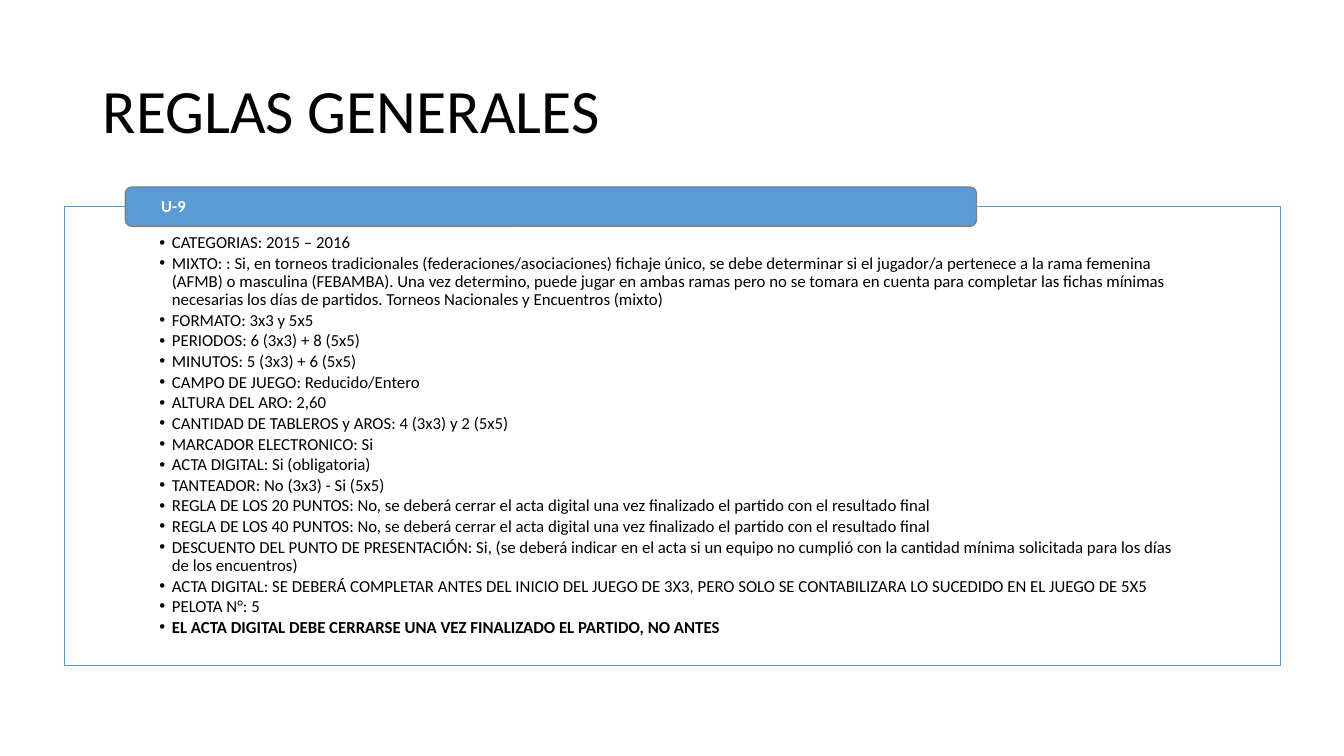
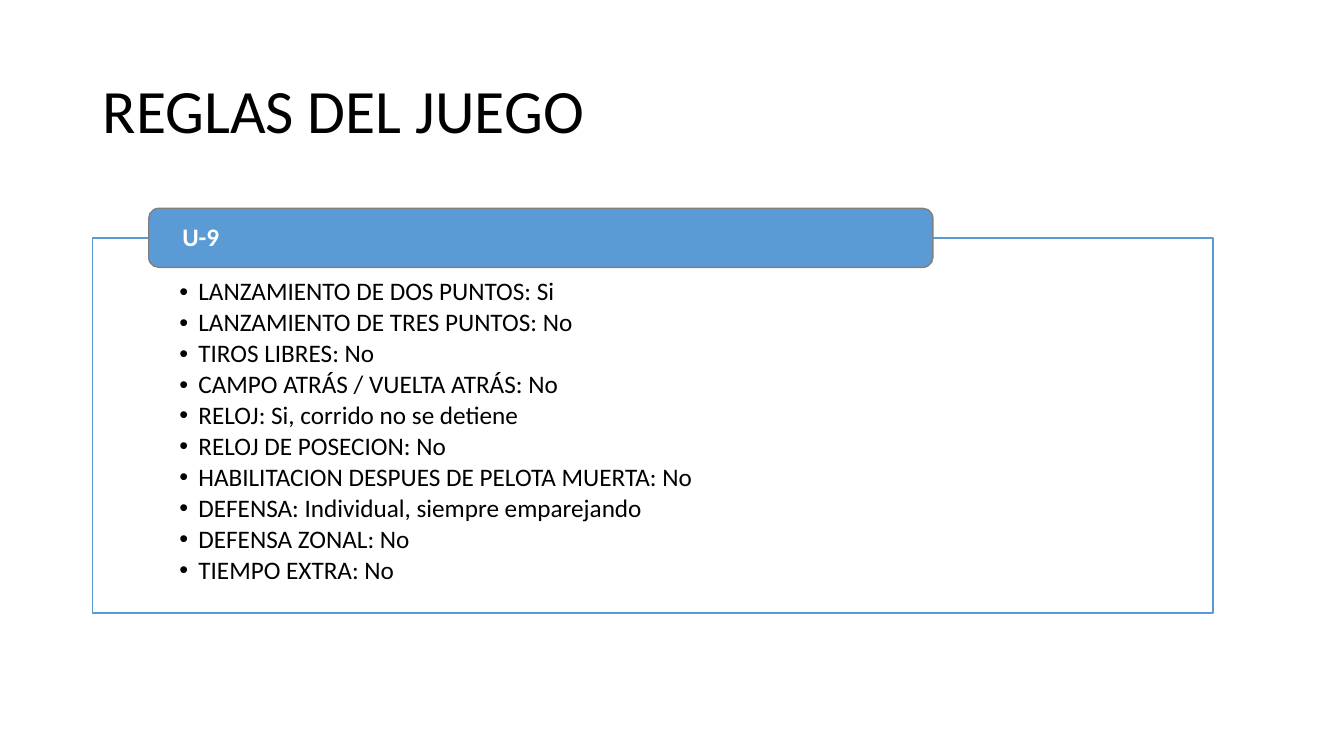
import pptx
import pptx.util
import pptx.dml.color
import pptx.enum.shapes
import pptx.enum.text
import pptx.oxml.ns
import lxml.etree

Inches, Pt = pptx.util.Inches, pptx.util.Pt
ANCHOR = pptx.enum.text.MSO_ANCHOR
SHAPE = pptx.enum.shapes.MSO_SHAPE

FONT = "Calibri"
BLACK, WHITE, BLUE, GRAY = "000000", "FFFFFF", "5B9BD5", "808080"

PAGES = [
    {
        "title": "REGLAS GENERALES",
        "category": "U-9",
        "frame": (0.64, 2.05, 12.06, 4.55),
        "margin": 0.94,
        "size": 12,
        "rules": [
            "CATEGORIAS: 2015 – 2016",
            "MIXTO: : Si, en torneos tradicionales (federaciones/asociaciones) fichaje único, "
            "se debe determinar si el jugador/a pertenece a la rama femenina (AFMB) o masculina "
            "(FEBAMBA). Una vez determino, puede jugar en ambas ramas pero no se tomara en cuenta "
            "para completar las fichas mínimas necesarias los días de partidos. "
            "Torneos Nacionales y Encuentros (mixto)",
            "FORMATO: 3x3 y 5x5",
            "PERIODOS: 6 (3x3) + 8 (5x5)",
            "MINUTOS: 5 (3x3) + 6 (5x5)",
            "CAMPO DE JUEGO: Reducido/Entero",
            "ALTURA DEL ARO: 2,60",
            "CANTIDAD DE TABLEROS y AROS: 4 (3x3) y 2 (5x5)",
            "MARCADOR ELECTRONICO: Si",
            "ACTA DIGITAL: Si (obligatoria)",
            "TANTEADOR: No (3x3) - Si (5x5)",
            "REGLA DE LOS 20 PUNTOS: No, se deberá cerrar el acta digital una vez finalizado "
            "el partido con el resultado final",
            "REGLA DE LOS 40 PUNTOS: No, se deberá cerrar el acta digital una vez finalizado "
            "el partido con el resultado final",
            "DESCUENTO DEL PUNTO DE PRESENTACIÓN: Si, (se deberá indicar en el acta si un equipo "
            "no cumplió con la cantidad mínima solicitada para los días de los encuentros)",
            "ACTA DIGITAL: SE DEBERÁ COMPLETAR ANTES DEL INICIO DEL JUEGO DE 3X3, PERO SOLO SE "
            "CONTABILIZARA LO SUCEDIDO EN EL JUEGO DE 5X5",
            "PELOTA N°: 5",
        ],
        "warning": "EL ACTA DIGITAL DEBE CERRARSE UNA VEZ FINALIZADO EL PARTIDO, NO ANTES",
    },
    {
        "title": "REGLAS DEL JUEGO",
        "category": "U-9",
        "frame": (0.92, 2.36, 11.11, 3.72),
        "margin": 0.86,
        "size": 18,
        "rules": [
            "LANZAMIENTO DE DOS PUNTOS: Si",
            "LANZAMIENTO DE TRES PUNTOS: No",
            "TIROS LIBRES: No",
            "CAMPO ATRÁS / VUELTA ATRÁS: No",
            "RELOJ: Si, corrido no se detiene",
            "RELOJ DE POSECION: No",
            "HABILITACION DESPUES DE PELOTA MUERTA: No",
            "DEFENSA: Individual, siempre emparejando",
            "DEFENSA ZONAL: No",
            "TIEMPO EXTRA: No",
        ],
        "warning": None,
    },
]


def rgb(value):
    return pptx.dml.color.RGBColor.from_string(value)


def style(para, size, color, bold=False):
    para.alignment = pptx.enum.text.PP_ALIGN.LEFT
    para.line_spacing = 0.9
    for span in para.runs:
        span.font.name = FONT
        span.font.size = Pt(size)
        span.font.bold = bold
        span.font.color.rgb = rgb(color)


def set_frame(box, anchor, left, top, right, bottom):
    frame = box.text_frame
    frame.word_wrap = True
    frame.vertical_anchor = anchor
    frame.margin_left, frame.margin_right = Inches(left), Inches(right)
    frame.margin_top, frame.margin_bottom = Inches(top), Inches(bottom)
    return frame


def add_panel(page, kind, place, fill, line):
    box = page.shapes.add_shape(kind, *map(Inches, place))
    box.shadow.inherit = False
    box.fill.solid()
    box.fill.fore_color.rgb = rgb(fill)
    box.line.color.rgb = rgb(line)
    box.line.width = Pt(1)
    return box


def make_translucent(box, percent):
    qn = pptx.oxml.ns.qn
    color = box.fill._xPr.find(qn("a:solidFill")).find(qn("a:srgbClr"))
    lxml.etree.SubElement(color, qn("a:alpha"), val=str(percent * 1000))


def add_bullet(para, indent):
    qn = pptx.oxml.ns.qn
    props = para._p.get_or_add_pPr()
    props.set("marL", str(Inches(indent)))
    props.set("indent", str(-Inches(indent)))
    lxml.etree.SubElement(props, qn("a:buFont"), typeface="Arial")
    lxml.etree.SubElement(props, qn("a:buChar"), char="•")


def add_title(page, text):
    box = page.shapes.add_textbox(*map(Inches, (0.92, 0.4, 11.5, 1.45)))
    frame = set_frame(box, ANCHOR.MIDDLE, 0.1, 0.05, 0.1, 0.05)
    frame.text = text
    style(frame.paragraphs[0], 44, BLACK)


def add_rules(page, content):
    left, top, width, height = content["frame"]
    size, margin = content["size"], content["margin"]
    em = size / 72

    panel = add_panel(page, SHAPE.RECTANGLE, content["frame"], WHITE, BLUE)
    make_translucent(panel, 90)
    frame = set_frame(panel, ANCHOR.TOP, margin, 1.64 * em, margin, 0.55 * em)
    warning = content["warning"]
    lines = content["rules"] + ([warning] if warning else [])
    frame.text = "\n".join(lines)
    for para in frame.paragraphs:
        para.level = 1
        style(para, size, BLACK, bold=para.text == warning)
        para.space_after = Pt(0.15 * size)
        add_bullet(para, 0.75 * em)

    tab_height, tab_offset = 2.34 * em, 0.05 * width
    place = (left + tab_offset, top - tab_height / 2, 0.7 * width, tab_height)
    tab = add_panel(page, SHAPE.ROUNDED_RECTANGLE, place, BLUE, GRAY)
    inset = margin - tab_offset
    frame = set_frame(tab, ANCHOR.MIDDLE, inset, 0, inset, 0)
    frame.text = content["category"]
    style(frame.paragraphs[0], size, WHITE, bold=True)


def main():
    """Build the deck of rules for the U-9 category."""
    deck = pptx.Presentation()
    deck.slide_width, deck.slide_height = Inches(13.33), Inches(7.5)
    for content in PAGES:
        page = deck.slides.add_slide(deck.slide_layouts[6])
        add_title(page, content["title"])
        add_rules(page, content)
    deck.save("out.pptx")


if __name__ == "__main__":
    main()
